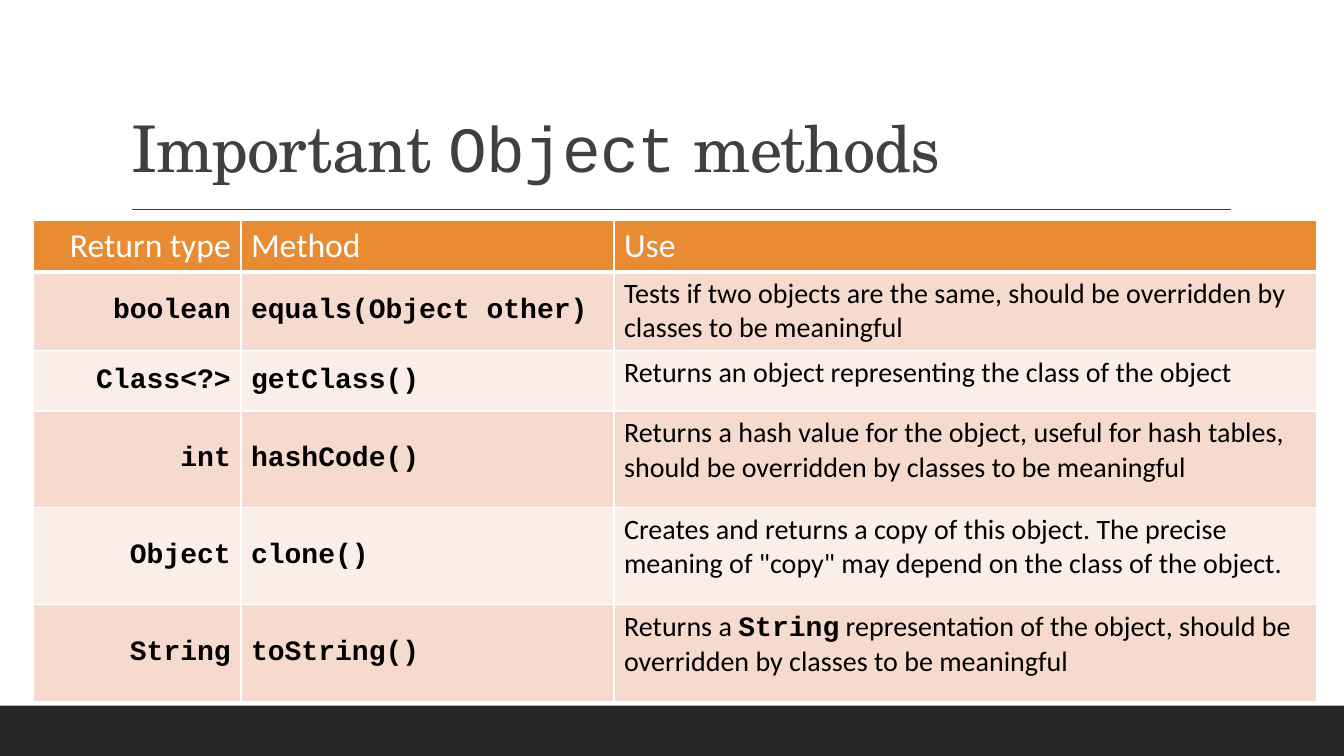
from dataclasses import dataclass

from lxml import etree
from pptx import Presentation
from pptx import util as u
from pptx.dml.color import RGBColor
from pptx.enum import shapes, text
from pptx.oxml import ns

Inches, Pt = u.Inches, u.Pt
ALIGN, ANCHOR = text.PP_ALIGN, text.MSO_ANCHOR


@dataclass(frozen=True)
class Theme:
    head: str = "TeX Gyre Schola"
    body: str = "Calibri"
    code: str = "Courier New"
    ink: str = "404040"
    black: str = "000000"
    white: str = "FFFFFF"
    foot: str = "262626"
    accent: str = "E88B33"
    bands: tuple = ("F6DACE", "FBEEE8")
    title: int = 46
    label: int = 24
    cell: int = 20


def color(code):
    return RGBColor.from_string(code)


def write(frame, words, font, size, ink, align=ALIGN.LEFT, code=None,
          space=None, track=None):
    """Write one paragraph; parts between backticks take the code font."""
    para = frame.paragraphs[0]
    para.alignment = align
    if space:
        para.line_spacing = space
    for i, part in enumerate(words.split("`")):
        if not part:
            continue
        mono = i % 2 == 1
        run = para.add_run()
        run.text = part
        run.font.name = code if mono else font
        run.font.size = Pt(size)
        run.font.bold = mono and track is None
        run.font.color.rgb = color(ink)
        if track is not None:
            run.font._element.set("spc", str(int(track * 100)))


class Deck:
    def __init__(self, theme):
        self.theme = theme
        self.file = Presentation()
        self.file.slide_width = Inches(13.33)
        self.file.slide_height = Inches(7.5)
        self.slide = self.file.slides.add_slide(self.file.slide_layouts[5])

    def bar(self, x, y, w, h, fill):
        box = self.slide.shapes.add_shape(
            shapes.MSO_SHAPE.RECTANGLE, *map(Inches, (x, y, w, h)))
        box.shadow.inherit = False
        box.fill.solid()
        box.fill.fore_color.rgb = color(fill)
        box.line.fill.background()

    def rule(self, x, y, end, ink):
        line = self.slide.shapes.add_connector(
            shapes.MSO_CONNECTOR.STRAIGHT, *map(Inches, (x, y, end, y)))
        line.line.color.rgb = color(ink)
        line.line.width = Pt(1)
        etree.SubElement(line._element.spPr, ns.qn("a:effectLst"))

    def title(self, words, x, y, w, h):
        t, box = self.theme, self.slide.shapes.title
        box.left, box.top, box.width, box.height = map(Inches, (x, y, w, h))
        box.text_frame.word_wrap = True
        box.text_frame.auto_size = text.MSO_AUTO_SIZE.NONE
        box.text_frame.vertical_anchor = ANCHOR.BOTTOM
        write(box.text_frame, words, t.head, t.title, t.ink,
              code=t.code, space=0.9, track=-0.5)

    def edge(self, cell, base):
        """Draw the four borders; they precede the fill in the cell."""
        props = cell._tc.get_or_add_tcPr()
        for i, (side, wide) in enumerate(zip("LRTB", (1, 1, 1, base))):
            line = etree.Element(ns.qn("a:ln" + side), w=str(Pt(wide)))
            fill = etree.SubElement(line, ns.qn("a:solidFill"))
            etree.SubElement(fill, ns.qn("a:srgbClr"), val=self.theme.white)
            props.insert(i, line)

    def table(self, rows, x, y, cols, highs):
        t = self.theme
        grid = self.slide.shapes.add_table(
            len(rows), len(cols), Inches(x), Inches(y),
            Inches(sum(cols)), Inches(sum(highs))).table
        for col, wide in zip(grid.columns, cols):
            col.width = Inches(wide)
        for r, (row, high) in enumerate(zip(rows, highs)):
            grid.rows[r].height = Inches(high)
            top = r == 0
            for c, words in enumerate(row):
                cell = grid.cell(r, c)
                cell.fill.solid()
                cell.fill.fore_color.rgb = color(
                    t.accent if top else t.bands[(r - 1) % 2])
                self.edge(cell, 3 if top else 1)
                if not top and c < 2:
                    cell.vertical_anchor = ANCHOR.MIDDLE
                    words = f"`{words}`"
                write(cell.text_frame, words, t.body,
                      t.label if top else t.cell,
                      t.white if top else t.black,
                      align=ALIGN.RIGHT if c == 0 else ALIGN.LEFT,
                      code=t.code)


ROWS = [
    ("Return type", "Method", "Use"),
    ("boolean", "equals(Object other)",
     "Tests if two objects are the same, should be overridden by classes "
     "to be meaningful"),
    ("Class<?>", "getClass()",
     "Returns an object representing the class of the object"),
    ("int", "hashCode()",
     "Returns a hash value for the object, useful for hash tables, should "
     "be overridden by classes to be meaningful"),
    ("Object", "clone()",
     "Creates and returns a copy of this object. The precise meaning of "
     '"copy" may depend on the class of the object.'),
    ("String", "toString()",
     "Returns a `String` representation of the object, should be "
     "overridden by classes to be meaningful"),
]


def main():
    theme = Theme()
    deck = Deck(theme)
    # Footer band and title rule
    deck.bar(0, 7, 13.33, 0.5, theme.foot)
    deck.rule(1.31, 2.08, 12.21, theme.ink)
    # Title
    deck.title("Important `Object` methods", 1.2, 0.31, 11, 1.59)
    # Method table
    deck.table(ROWS, 0.33, 2.19, (2.06, 3.7, 6.97),
               (0.5, 0.78, 0.6, 0.96, 0.96, 0.96))
    deck.file.save("out.pptx")


if __name__ == "__main__":
    main()
